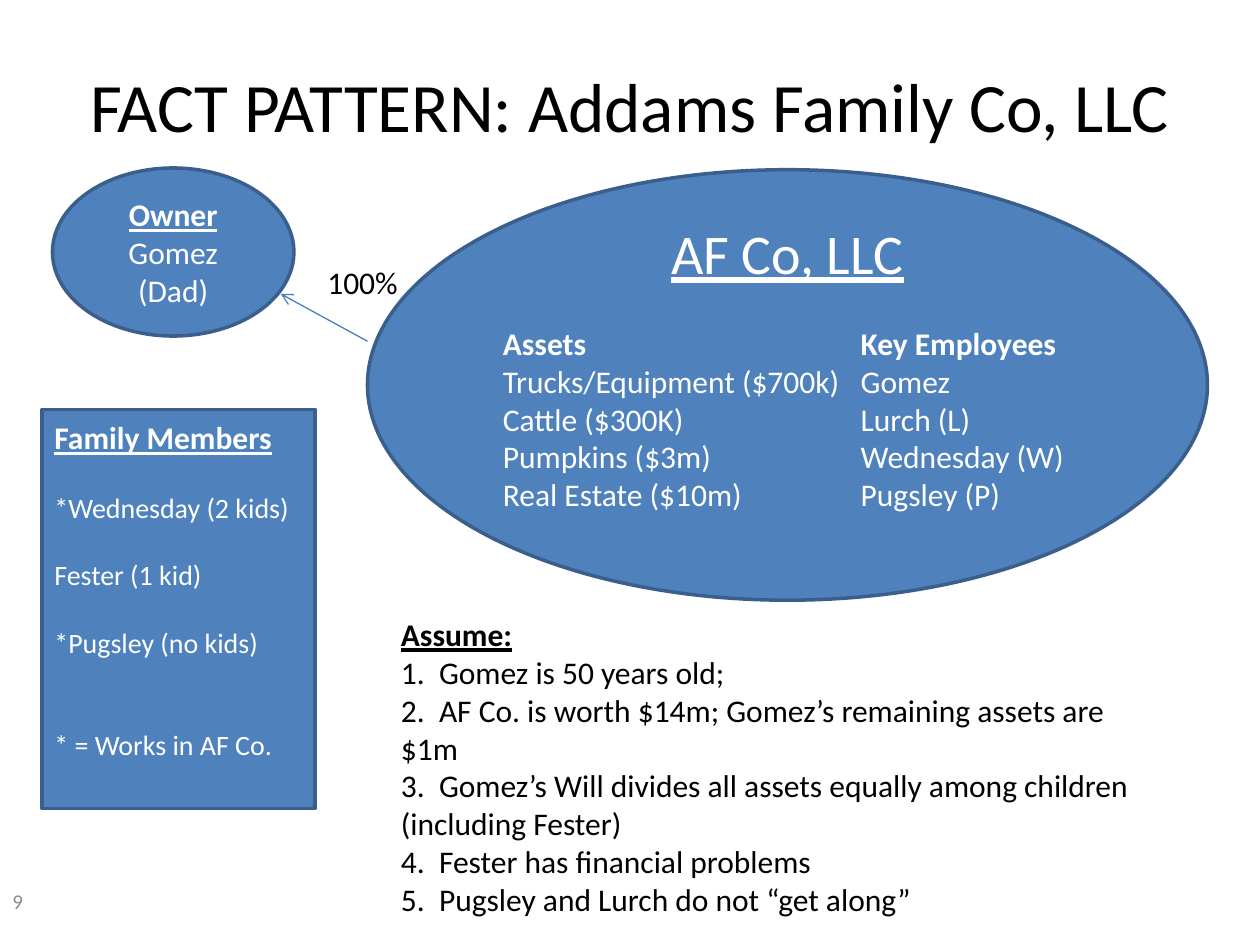
from dataclasses import dataclass

from lxml.etree import SubElement
from pptx import Presentation
from pptx.dml.color import RGBColor
from pptx.enum.shapes import MSO_CONNECTOR, MSO_SHAPE
from pptx.enum.text import MSO_ANCHOR, PP_ALIGN
from pptx.oxml.ns import qn
from pptx.slide import Slide
from pptx.util import Pt

BLACK = RGBColor(0x00, 0x00, 0x00)
WHITE = RGBColor(0xFF, 0xFF, 0xFF)
GREY = RGBColor(0x8C, 0x8C, 0x8C)
BLUE = RGBColor(0x4F, 0x81, 0xBD)
DARK_BLUE = RGBColor(0x3A, 0x5F, 0x8C)
ARROW_BLUE = RGBColor(0x4B, 0x7E, 0xBC)


@dataclass
class Line:
    text: str
    size: float = 18
    bold: bool = False
    underline: bool = False
    align: PP_ALIGN = PP_ALIGN.LEFT
    before: float = 0
    tab: float = 0


@dataclass
class SlideBuilder:
    slide: Slide
    font: str = "Calibri"
    outline: float = 2

    def add_lines(self, shape, lines, color, anchor, bottom=3.6):
        frame = shape.text_frame
        frame.word_wrap = True
        frame.vertical_anchor = anchor
        frame.margin_bottom = Pt(bottom)
        for index, line in enumerate(lines):
            paragraph = frame.add_paragraph() if index else frame.paragraphs[0]
            paragraph.alignment = line.align
            if line.before:
                paragraph.space_before = Pt(line.before)
            if line.tab:
                tabs = SubElement(paragraph._p.get_or_add_pPr(), qn("a:tabLst"))
                SubElement(tabs, qn("a:tab"), pos=str(Pt(line.tab)), algn="l")
            run = paragraph.add_run()
            run.text = line.text
            run.font.name = self.font
            run.font.size = Pt(line.size)
            run.font.bold = line.bold
            run.font.underline = line.underline
            run.font.color.rgb = color

    def text(self, box, lines, color=BLACK, anchor=MSO_ANCHOR.TOP):
        shape = self.slide.shapes.add_textbox(*map(Pt, box))
        self.add_lines(shape, lines, color, anchor)

    def panel(self, kind, box, lines, bottom=3.6):
        shape = self.slide.shapes.add_shape(kind, *map(Pt, box))
        shape.shadow.inherit = False
        shape.fill.solid()
        shape.fill.fore_color.rgb = BLUE
        shape.line.color.rgb = DARK_BLUE
        shape.line.width = Pt(self.outline)
        self.add_lines(shape, lines, WHITE, MSO_ANCHOR.MIDDLE, bottom)

    def arrow(self, start, end):
        connector = self.slide.shapes.add_connector(
            MSO_CONNECTOR.STRAIGHT, *map(Pt, start + end))
        connector.line.color.rgb = ARROW_BLUE
        connector.line.width = Pt(0.75)
        SubElement(connector.line._get_or_add_ln(), qn("a:tailEnd"), type="arrow")
        SubElement(connector._element.spPr, qn("a:effectLst"))


def main():
    presentation = Presentation()
    presentation.slide_width = Pt(720)
    presentation.slide_height = Pt(540)
    builder = SlideBuilder(presentation.slides.add_slide(presentation.slide_layouts[6]))
    center = PP_ALIGN.CENTER

    builder.text((36, 24, 648, 72),
                 [Line("FACT PATTERN: Addams Family Co, LLC", 39.6, align=center)],
                 anchor=MSO_ANCHOR.MIDDLE)

    company_rows = [
        ("Trucks/Equipment ($700k)", "Gomez"),
        ("Cattle ($300K)", "Lurch (L)"),
        ("Pumpkins ($3m)", "Wednesday (W)"),
        ("Real Estate ($10m)", "Pugsley (P)"),
    ]
    builder.panel(
        MSO_SHAPE.OVAL, (210, 97, 480, 246),
        [Line("AF Co, LLC", 32, underline=True, align=center),
         Line("Assets\tKey Employees", bold=True, before=22, tab=204.5)]
        + [Line(f"{asset}\t{employee}", tab=204.5) for asset, employee in company_rows],
        bottom=25.6)

    builder.panel(
        MSO_SHAPE.OVAL, (30, 96, 138, 96),
        [Line("Owner", bold=True, underline=True, align=center),
         Line("Gomez", align=center),
         Line("(Dad)", align=center)])
    builder.arrow((210, 195), (160.5, 168))
    builder.text((180, 147, 72, 29), [Line("100%")])

    members = ["*Wednesday (2 kids)", "Fester (1 kid)", "*Pugsley (no kids)"]
    builder.panel(
        MSO_SHAPE.RECTANGLE, (24, 234, 156, 228),
        [Line("Family Members", bold=True, underline=True)]
        + [Line(member, 16, before=19.5) for member in members]
        + [Line("* = Works in AF Co.", 16, before=39)],
        bottom=25.6)

    assumptions = [
        "Gomez is 50 years old;",
        "AF Co. is worth $14m; Gomez’s remaining assets are $1m",
        "Gomez’s Will divides all assets equally among children (including Fester)",
        "Fester has financial problems",
        "Pugsley and Lurch do not “get along”",
    ]
    builder.text(
        (222, 348, 450, 181),
        [Line("Assume:", bold=True, underline=True)]
        + [Line(f"{number}.  {assumption}")
           for number, assumption in enumerate(assumptions, 1)])

    builder.text((0, 500.5, 168, 28.75), [Line("9", 12)], GREY, MSO_ANCHOR.MIDDLE)
    presentation.save("out.pptx")


if __name__ == "__main__":
    main()
